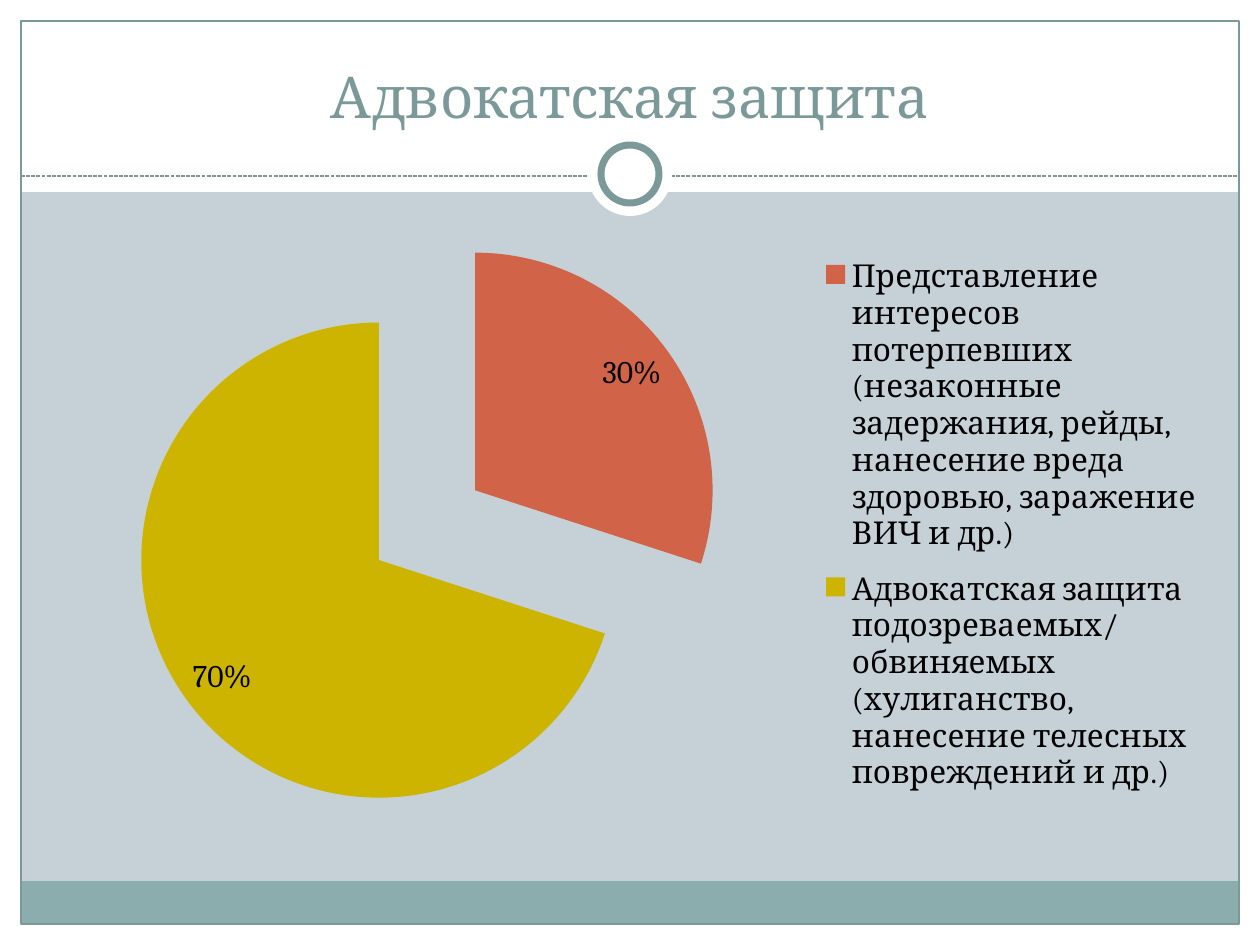
from lxml.etree import SubElement
from pptx import Presentation
from pptx.chart.data import CategoryChartData as Data
from pptx.dml.color import RGBColor as RGB
from pptx.enum.chart import XL_CHART_TYPE as Kind, XL_LABEL_POSITION as Spot
from pptx.enum.chart import XL_LEGEND_POSITION as Side
from pptx.enum.dml import MSO_LINE as Dash
from pptx.enum.shapes import MSO_CONNECTOR as Link, MSO_SHAPE as Form
from pptx.enum.text import MSO_ANCHOR as Anchor, PP_ALIGN as Align
from pptx.oxml.ns import qn
from pptx.util import Pt

# Content
TITLE = "Адвокатская защита"
SHARES = [
    ("Представление интересов потерпевших (незаконные задержания, рейды, "
     "нанесение вреда здоровью, заражение ВИЧ и др.)", 0.3, "red"),
    ("Адвокатская защита подозреваемых/обвиняемых (хулиганство, "
     "нанесение телесных повреждений и др.)", 0.7, "gold"),
]
HEX = {"back": "C5D1D7", "white": "FFFFFF", "band": "8CADAE", "line": "7C999A",
       "black": "000000", "red": "D16349", "gold": "CCB400"}
FONT = "Cambria"

# Layout in px
SCALE = 914400 / 126
WIDE, HIGH, EDGE = 1260, 945, 21
HEAD, FOOT, RULE = 192, 43, 176
HUB = (WIDE // 2, 174)
CHART = (42, 210, 1172, 630)
PIE = (130, 228, 594, 594)
KEY = (815, 240, 392, 570)


def px(*nums):
    return [round(n * SCALE) for n in nums]


def color(name):
    return RGB.from_string(HEX[name])


def draw(form, box, fill=None, line=None, width=0.75):
    shape = slide.shapes.add_shape(form, *px(*box))
    shape.shadow.inherit = False
    if fill:
        shape.fill.solid()
        shape.fill.fore_color.rgb = color(fill)
    else:
        shape.fill.background()
    if line:
        shape.line.color.rgb = color(line)
        shape.line.width = Pt(width)
    else:
        shape.line.fill.background()


def disc(size, **style):
    x, y = HUB
    draw(Form.OVAL, (x - size / 2, y - size / 2, size, size), "white", **style)


def place(owner, box, inner=False):
    """Fix a chart part at a box given in slide px."""
    old = owner.find(qn("c:layout"))
    if old is not None:
        owner.remove(old)
    lay = SubElement(owner, qn("c:layout"))
    man = SubElement(lay, qn("c:manualLayout"))
    left, top, wide, high = CHART
    x, y, w, h = box
    rows = [("layoutTarget", "inner")] if inner else []
    rows += [("xMode", "edge"), ("yMode", "edge"),
             ("x", round((x - left) / wide, 3)), ("y", round((y - top) / high, 3)),
             ("w", round(w / wide, 3)), ("h", round(h / high, 3))]
    for tag, val in rows:
        SubElement(man, qn("c:" + tag)).set("val", str(val))
    return lay


deck = Presentation()
deck.slide_width, deck.slide_height = px(WIDE, HIGH)
slide = deck.slides.add_slide(deck.slide_layouts[6])
slide.background.fill.solid()
slide.background.fill.fore_color.rgb = color("back")

# White margins, foot band and frame
for box in [(0, HIGH - EDGE, WIDE, EDGE), (0, 0, WIDE, HEAD),
            (0, 0, EDGE, HIGH), (WIDE - EDGE, 0, EDGE, HIGH)]:
    draw(Form.RECTANGLE, box, "white")
span = WIDE - 2 * EDGE
draw(Form.RECTANGLE, (EDGE, HIGH - EDGE - FOOT, span, FOOT), "band")
draw(Form.RECTANGLE, (EDGE, EDGE, span, HIGH - 2 * EDGE), line="line")

# Dashed rule with a ring
rule = slide.shapes.add_connector(Link.STRAIGHT, *px(EDGE, RULE, WIDE - EDGE, RULE))
rule.line.color.rgb = color("line")
rule.line.width = Pt(0.75)
rule.line.dash_style = Dash.SQUARE_DOT
SubElement(rule.element.spPr, qn("a:effectLst"))
disc(84)
disc(58, line="line", width=4)

# Title
frame = slide.shapes.add_textbox(*px(42, 32, 1176, 104)).text_frame
frame.word_wrap = True
frame.vertical_anchor = Anchor.BOTTOM
para = frame.paragraphs[0]
para.text = TITLE
para.alignment = Align.CENTER
para.font.size, para.font.name = Pt(33), FONT
para.font.color.rgb = color("line")

# Pie chart
data = Data(number_format="0%")
data.categories = [name for name, _, _ in SHARES]
data.add_series("Series 1", [share for _, share, _ in SHARES])
chart = slide.shapes.add_chart(Kind.PIE, *px(*CHART), data).chart
chart.has_title = False
chart.font.size, chart.font.name = Pt(18), FONT
chart.font.color.rgb = color("black")

plot = chart.plots[0]
plot.vary_by_categories = True
pie = plot.series[0]
for i, (_, _, tint) in enumerate(SHARES):
    fill = pie.points[i].format.fill
    fill.solid()
    fill.fore_color.rgb = color(tint)
burst = SubElement(pie._element, qn("c:explosion"))
burst.set("val", "25")
pie._element.find(qn("c:tx")).addnext(burst)

plot.has_data_labels = True
labels = plot.data_labels
labels.show_value, labels.show_percentage = True, False
labels.number_format, labels.number_format_is_linked = "0%", False
labels.position = Spot.INSIDE_END

# Legend and pie positions
chart.has_legend = True
key = chart.legend
key.position, key.include_in_layout = Side.RIGHT, False
key._element.find(qn("c:legendPos")).addnext(place(key._element, KEY))
area = plot._element.getparent()
area.insert(0, place(area, PIE, inner=True))

deck.save("out.pptx")
